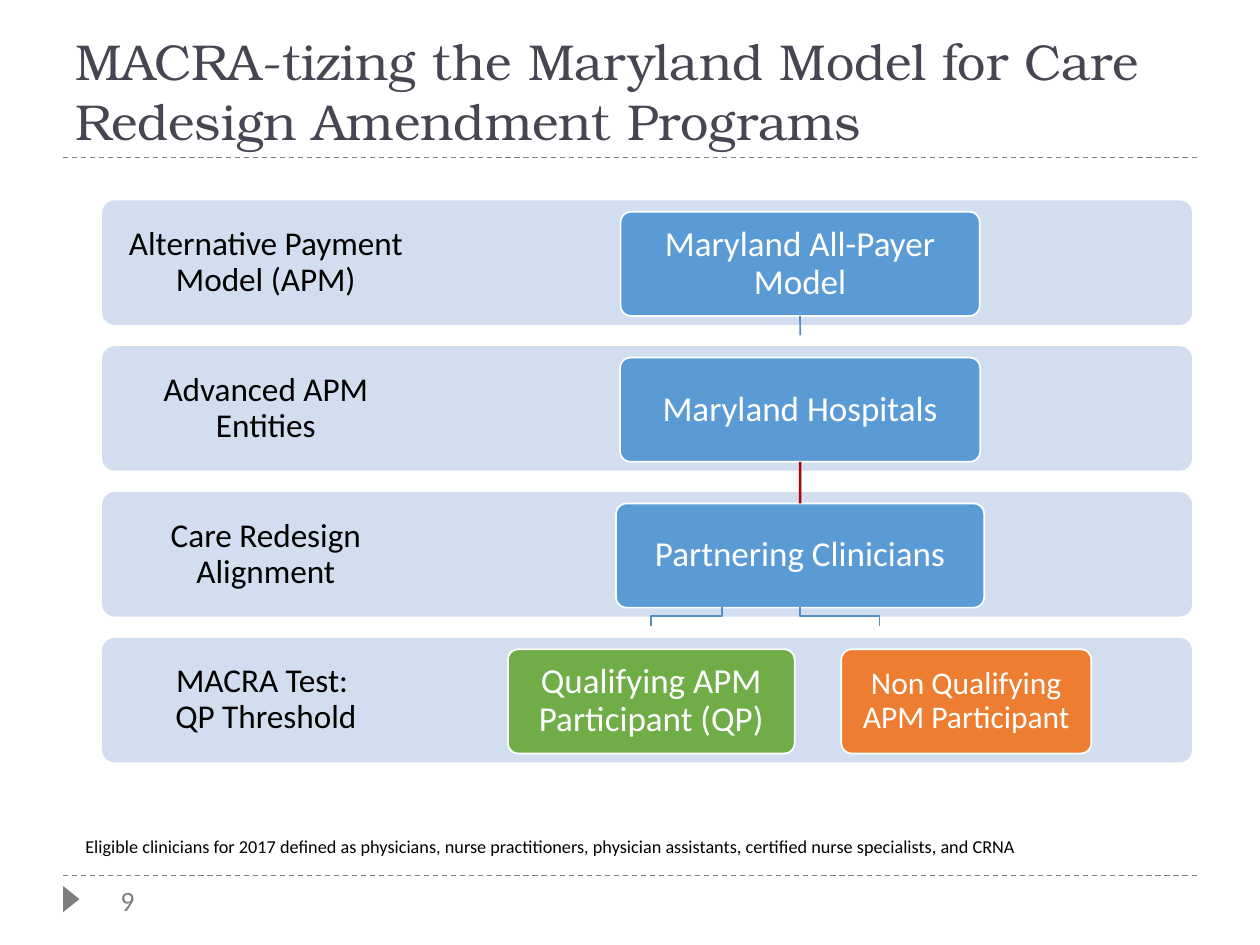
from pptx import Presentation
from pptx.dml.color import RGBColor
from pptx.enum.dml import MSO_LINE
from pptx.enum.shapes import MSO_CONNECTOR, MSO_SHAPE
from pptx.enum.text import MSO_ANCHOR, PP_ALIGN
from pptx.util import Cm, Pt
from lxml import etree

STRAIGHT = MSO_CONNECTOR.STRAIGHT
ROUNDED, TRIANGLE = MSO_SHAPE.ROUNDED_RECTANGLE, MSO_SHAPE.ISOSCELES_TRIANGLE
TOP, MIDDLE, BOTTOM = MSO_ANCHOR.TOP, MSO_ANCHOR.MIDDLE, MSO_ANCHOR.BOTTOM
LEFT, CENTER = PP_ALIGN.LEFT, PP_ALIGN.CENTER
DASH = MSO_LINE.DASH
DRAWING_NS = "http://schemas.openxmlformats.org/drawingml/2006/main"


def color(hex_text):
    return RGBColor.from_string(hex_text)


def write(shape, text, size, hex_text, font="Calibri", anchor=MIDDLE,
          align=CENTER, inset=None, spacing=0.9):
    frame = shape.text_frame
    frame.word_wrap = True
    frame.vertical_anchor = anchor
    if inset is not None:
        frame.margin_left = frame.margin_right = Cm(inset)
        frame.margin_top = frame.margin_bottom = Cm(inset)
    frame.text = text
    para = frame.paragraphs[0]
    para.alignment = align
    para.line_spacing = spacing
    para.font.name = font
    para.font.size = Pt(size)
    para.font.color.rgb = color(hex_text)
    return para


deck = Presentation()
deck.slide_width, deck.slide_height = Cm(25.4), Cm(19.05)
page = deck.slides.add_slide(deck.slide_layouts[6])
shapes = page.shapes

# Dashed rules under the title and above the footer
for y in (17.65, 3.18):
    rule = shapes.add_connector(STRAIGHT, Cm(1.27), Cm(y), Cm(24.13), Cm(y))
    rule.line.color.rgb = color("7F7F7F")
    rule.line.width = Pt(0.75)
    rule.line.dash_style = DASH
    etree.SubElement(rule._element.spPr, f"{{{DRAWING_NS}}}effectLst")

# Footer marker and page number
marker = shapes.add_shape(TRIANGLE, Cm(1.17), Cm(17.96), Cm(0.53), Cm(0.33))
marker.rotation = 90
marker.shadow.inherit = False
marker.fill.solid()
marker.fill.fore_color.rgb = color("7F7F7F")
marker.line.fill.background()
number = shapes.add_textbox(Cm(2.18), Cm(17.68), Cm(1.19), Cm(0.94))
write(number, "9", 16, "808080", anchor=TOP, align=LEFT, spacing=1)

# Title and footnote
title = shapes.add_textbox(Cm(1.27), Cm(0.43), Cm(22.86), Cm(2.74))
write(title, "MACRA-tizing the Maryland Model for Care Redesign Amendment Programs",
      28.8, "464653", "TeX Gyre Bonum", BOTTOM, LEFT, spacing=1)
footnote = shapes.add_textbox(Cm(1.47), Cm(16.64), Cm(23.04), Cm(1.02))
note = write(footnote, "Eligible clinicians for 2017 defined as physicians, nurse "
             "practitioners, physician assistants, certified nurse specialists, and CRNA",
             18, "000000", anchor=TOP, align=LEFT, spacing=1)
for span in note.runs:
    span.font._element.set("baseline", "30000")  # raised text

# Level bands with their labels
BAND_TOP, PITCH = 4.04, 2.94
labels = ("Alternative Payment Model (APM)", "Advanced APM Entities",
          "Care Redesign Alignment", "MACRA Test: \vQP Threshold")
for level, label in enumerate(labels):
    top = Cm(BAND_TOP + level * PITCH)
    band = shapes.add_shape(ROUNDED, Cm(2.06), top, Cm(21.97), Cm(2.51))
    band.adjustments[0] = 0.1
    band.shadow.inherit = False
    band.fill.solid()
    band.fill.fore_color.rgb = color("D2DEEF")
    band.line.fill.background()
    label_box = shapes.add_textbox(Cm(2.06), top, Cm(6.6), Cm(2.51))
    write(label_box, label, 19, "000000", inset=0.38)

# Hierarchy boxes: level, centre, width, fill, size, text
BOX_TOP, BOX_HEIGHT, AXIS = 4.27, 2.1, 16.13
nodes = (
    (0, AXIS, 7.24, "5B9BD5", 20, "Maryland All-Payer Model"),
    (1, AXIS, 7.26, "5B9BD5", 20, "Maryland Hospitals"),
    (2, AXIS, 7.42, "5B9BD5", 20, "Partnering Clinicians"),
    (3, 13.13, 5.78, "70AD47", 20, "Qualifying APM Participant (QP)"),
    (3, 19.48, 5.04, "ED7D31", 18, "Non Qualifying APM Participant"),
)
boxes = []
for level, centre, width, fill, size, text in nodes:
    box = shapes.add_shape(ROUNDED, Cm(centre - width / 2), Cm(BOX_TOP + level * PITCH),
                           Cm(width), Cm(BOX_HEIGHT))
    box.adjustments[0] = 0.1
    box.shadow.inherit = False
    box.fill.solid()
    box.fill.fore_color.rgb = color(fill)
    box.line.color.rgb = color("FFFFFF")
    box.line.width = Pt(1)
    write(box, text, size, "FFFFFF", inset=0.26)
    boxes.append(box)
model, hospitals, clinicians = boxes[:3]

# Straight links; the first one stops short of the hospitals
for upper, lower, end, hex_text, weight in (
        (model, None, 6.76, "538DC1", 1),
        (hospitals, clinicians, 10.15, "AE0000", 1.5)):
    link = shapes.add_connector(STRAIGHT, Cm(AXIS), Cm(end), Cm(AXIS), Cm(end))
    link.begin_connect(upper, 2)
    if lower is not None:
        link.end_connect(lower, 0)
    link.line.color.rgb = color(hex_text)
    link.line.width = Pt(weight)
    etree.SubElement(link._element.spPr, f"{{{DRAWING_NS}}}effectLst")

# Stepped links below the clinicians
for start, end in ((14.55, 13.13), (AXIS, 17.73)):
    path = shapes.build_freeform(Cm(start), Cm(12.23))
    path.add_line_segments([(Cm(start), Cm(12.42)), (Cm(end), Cm(12.42)),
                            (Cm(end), Cm(12.62))], close=False)
    step = path.convert_to_shape()
    step.shadow.inherit = False
    step.fill.background()
    step.line.color.rgb = color("538DC1")
    step.line.width = Pt(1)

deck.save("out.pptx")
